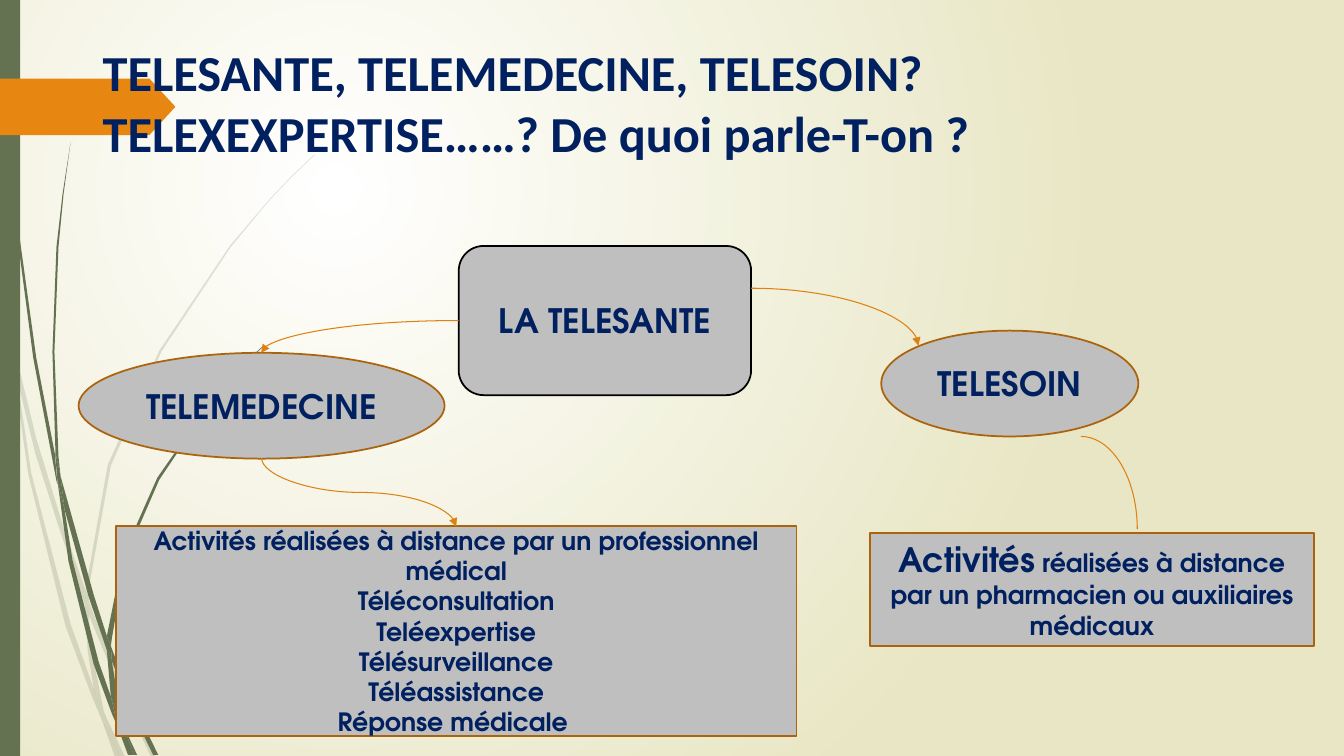
"""Builds the slide that explains telehealth, telemedicine and telecare."""
from lxml.etree import SubElement
from pptx import Presentation
from pptx.dml.color import RGBColor
from pptx.enum.shapes import MSO_CONNECTOR, MSO_SHAPE
from pptx.enum.text import MSO_ANCHOR, PP_ALIGN
from pptx.oxml.ns import qn
from pptx.util import Pt

PX = 9144
WIDE, HIGH = 1333, 750
NAVY, GREY, BROWN, ORANGE, GREEN = "002060", "BFBFBF", "AB640D", "DD8111", "647252"
SANS, ROUND = "Calibri", "TeX Gyre Adventor"

TITLE = "TELESANTE, TELEMEDECINE, TELESOIN? \vTELEXEXPERTISE……? De quoi parle-T-on ?"

BOXES = [
    (MSO_SHAPE.ROUNDED_RECTANGLE, (455, 244, 290, 148), "000000", [[("LA TELESANTE", 24)]]),
    (MSO_SHAPE.OVAL, (78, 350, 363, 105), BROWN, [[("TELEMEDECINE", 24)]]),
    (MSO_SHAPE.OVAL, (874, 328, 255, 105), BROWN, [[("TELESOIN", 24)]]),
    (MSO_SHAPE.RECTANGLE, (115, 522, 675, 208), BROWN, [
        [("Activités réalisées à distance par un professionnel médical", 18)],
        [("Téléconsultation", 18)],
        [("Teléexpertise", 18)],
        [("Télésurveillance", 18)],
        [("Téléassistance", 18)],
        [("Réponse médicale ", 18)],
    ]),
    (MSO_SHAPE.RECTANGLE, (863, 529, 440, 112), BROWN, [
        [("Activités", 24), (" réalisées à distance par un pharmacien ou auxiliaires médicaux", 18)],
    ]),
]

CURVES = [
    ("curvedConnector2", (745, 286, 911, 343), 0),
    ("curvedConnector2", (455, 318, 259, 350), 0),
    ("curvedConnector3", (390, 392, 322, 585), 270),
]

PALE = [
    [(11, 350), (9, 322), (0, 282), (0, 299), (10, 344)],
    [(58, 522), (84, 599), (85, 586), (62, 520), (36, 435), (14, 345), (17, 376), (35, 450)],
    [(92, 607), (88, 596), (88, 610), (123, 694), (150, 751), (155, 751), (127, 692)],
    [(119, 751), (124, 751), (105, 711)],
    [(93, 683), (70, 619), (31, 469), (17, 376), (11, 350), (28, 470), (65, 621), (92, 693),
     (101, 714), (99, 707)],
    [(84, 599), (87, 646), (93, 683), (96, 692), (105, 711), (103, 706), (91, 646), (88, 610),
     (88, 608)],
    [(88, 584), (110, 462), (160, 349), (229, 245), (268, 198), (290, 175), (312, 154),
     (312, 153), (289, 175), (268, 197), (228, 244), (158, 348), (107, 461), (85, 584),
     (85, 586), (88, 596)],
    [(101, 714), (114, 751), (119, 751)],
    [(88, 608), (88, 610), (88, 596), (85, 586), (84, 599)],
    [(96, 692), (93, 683), (99, 707), (101, 714), (119, 751), (105, 711)],
]

DARK = [
    [(7, 110), (17, 233), (33, 355), (56, 477), (57, 481), (55, 457), (55, 453), (36, 355),
     (19, 232), (8, 109), (5, 48), (4, 0), (3, 0), (4, 48)],
    [(88, 592), (106, 645), (106, 633), (106, 631), (93, 590), (60, 472), (64, 505)],
    [(113, 649), (110, 641), (111, 656), (132, 708), (152, 749), (157, 749), (136, 706)],
    [(110, 691), (98, 657), (72, 556), (64, 505), (57, 477), (68, 557), (93, 659), (111, 708),
     (117, 722), (116, 717)],
    [(60, 472), (58, 453), (54, 349), (58, 245), (63, 193), (70, 141), (62, 193), (56, 245),
     (52, 349), (55, 449)],
    [(133, 749), (136, 749), (122, 719)],
    [(57, 477), (64, 505), (60, 472), (55, 449), (55, 453)],
    [(111, 633), (125, 552), (158, 476), (205, 406), (231, 374), (245, 359), (261, 344),
     (260, 344), (245, 358), (231, 373), (204, 405), (156, 474), (122, 551), (106, 631),
     (110, 641)],
    [(117, 722), (127, 749), (131, 749)],
    [(106, 645), (110, 691), (116, 706), (122, 719), (121, 716), (111, 656), (109, 651)],
    [(106, 645), (109, 651), (111, 656), (110, 641), (106, 631), (106, 633)],
    [(116, 706), (110, 691), (116, 717), (117, 722), (130, 749), (133, 749), (122, 719)],
]


def tint(code):
    return RGBColor.from_string(code)


def emu(spots):
    return [n * PX for n in spots]


def style(shape, fill=None, line=None, width=1.25):
    shape.shadow.inherit = False
    if fill:
        shape.fill.solid()
        shape.fill.fore_color.rgb = tint(fill)
    else:
        shape.fill.background()
    if line:
        shape.line.color.rgb = tint(line)
        shape.line.width = Pt(width)
    else:
        shape.line.fill.background()
    return shape


def add(kind, area, **look):
    return style(slide.shapes.add_shape(kind, *emu(area)), **look)


def write(shape, paras, font=ROUND, color=NAVY, align=PP_ALIGN.CENTER, anchor=MSO_ANCHOR.MIDDLE):
    frame = shape.text_frame
    frame.word_wrap = True
    frame.vertical_anchor = anchor
    for i, parts in enumerate(paras):
        para = frame.add_paragraph() if i else frame.paragraphs[0]
        para.alignment = align
        for text, size in parts:
            seen = len(para.runs)
            if "\v" in text:
                para.text = text
            else:
                para.add_run().text = text
            for run in para.runs[seen:]:
                run.font.name = font
                run.font.size = Pt(size)
                run.font.bold = True
                run.font.color.rgb = tint(color)


def grow(spots, alpha):
    first, *rest = spots
    pen = slide.shapes.build_freeform(*first, scale=float(PX))
    pen.add_line_segments(rest, close=True)
    blade = style(pen.convert_to_shape(), fill=GREEN)
    if alpha < 100:
        code = blade.element.spPr.find(".//" + qn("a:srgbClr"))
        SubElement(code, qn("a:alpha"), val=str(alpha * 1000))


def bend(kind, ends, turn):
    link = slide.shapes.add_connector(MSO_CONNECTOR.CURVE, *emu(ends))
    link.line.color.rgb = tint(ORANGE)
    link.line.width = Pt(0.75)
    props = link.element.spPr
    props.find(qn("a:prstGeom")).set("prst", kind)
    if turn:
        props.find(qn("a:xfrm")).set("rot", str(turn * 60000))
    SubElement(props.find(qn("a:ln")), qn("a:tailEnd"), type="triangle")
    SubElement(props, qn("a:effectLst"))


def paint():
    fill = slide.background.fill
    fill.gradient()
    for stop, code in zip(fill.gradient_stops, ("FFFFFF", "E8E6C4")):
        stop.color.rgb = tint(code)
    grad = slide.element.find(".//" + qn("a:gradFill"))
    grad.remove(grad.find(qn("a:lin")))
    glow = SubElement(grad, qn("a:path"), path="circle")
    SubElement(glow, qn("a:fillToRect"), l="50000", t="50000", r="100000", b="100000")


deck = Presentation()
deck.slide_width, deck.slide_height = emu((WIDE, HIGH))
slide = deck.slides.add_slide(deck.slide_layouts[6])

paint()
for blades, alpha in ((PALE, 20), (DARK, 100)):
    for blade in blades:
        grow(blade, alpha)
add(MSO_SHAPE.RECTANGLE, (0, 0, 20, HIGH), fill=GREEN)
flag = add(MSO_SHAPE.PENTAGON, (0, 78, 174, 56), fill="E78712")
flag.adjustments[0] = 0.46

head = slide.shapes.add_textbox(*emu((92, 36, 1150, 258)))
write(head, [[(TITLE, 36)]], font=SANS, align=PP_ALIGN.LEFT, anchor=MSO_ANCHOR.TOP)
for kind, area, edge, paras in BOXES:
    write(add(kind, area, fill=GREY, line=edge), paras)
for curve in CURVES:
    bend(*curve)
add(MSO_SHAPE.ARC, (1016, 433, 112, 184), line=ORANGE, width=0.75)

deck.save("out.pptx")
